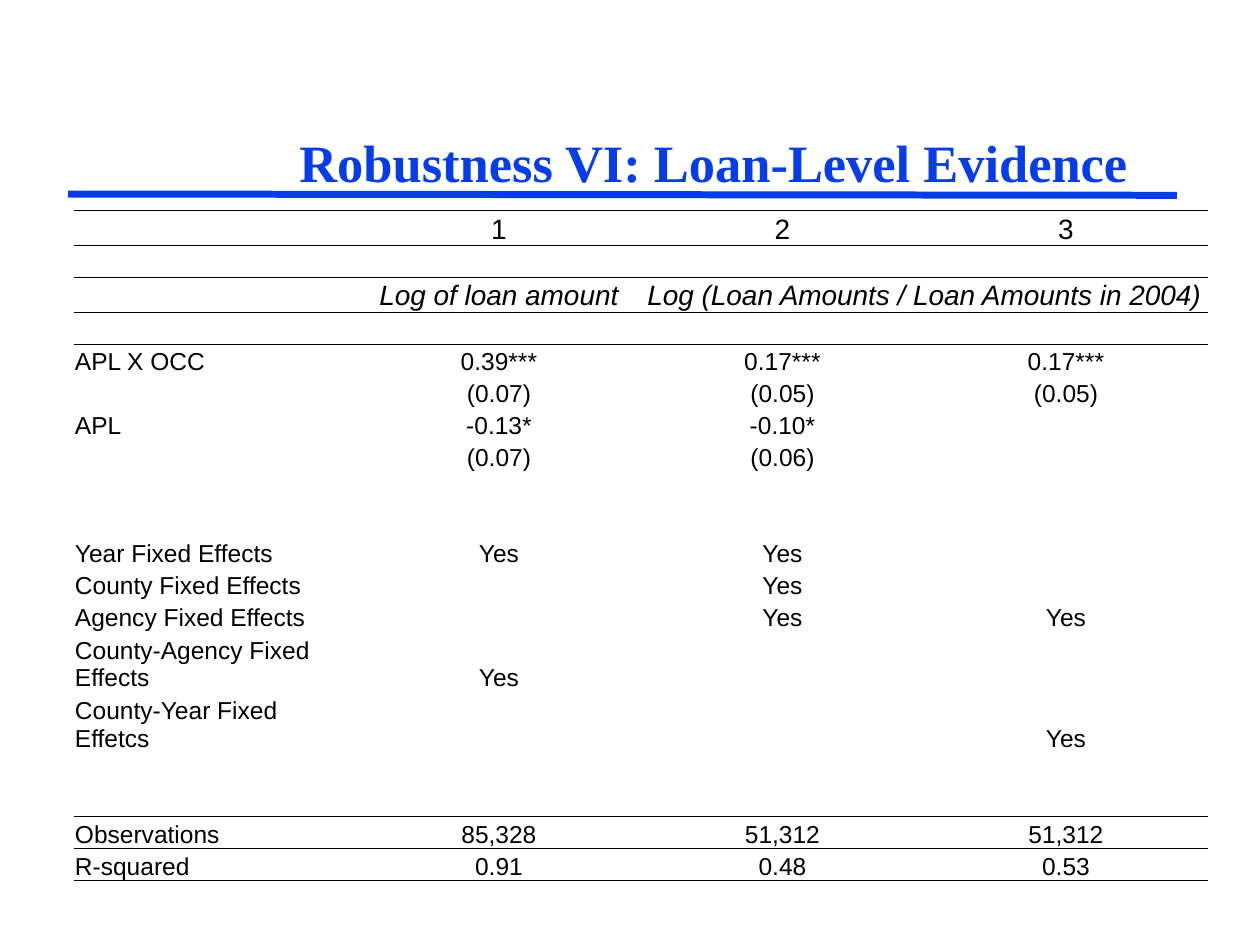
from dataclasses import dataclass

from lxml.etree import SubElement
from pptx import Presentation
from pptx.dml.color import RGBColor
from pptx.enum.shapes import MSO_CONNECTOR
from pptx.enum.text import MSO_ANCHOR, PP_ALIGN
from pptx.oxml import parse_xml
from pptx.oxml.ns import nsdecls, qn
from pptx.util import Inches, Pt


@dataclass(frozen=True)
class Theme:
    """Colours, fonts and type sizes of the deck."""
    accent: str = "063DE8"
    ink: str = "000000"
    title_font: str = "Times New Roman"
    body_font: str = "Arial"
    title_size: int = 30
    head_size: int = 16
    body_size: int = 14
    title_rule: float = 4
    table_rule: float = 0.5
    plain_table: str = "{2D5ABB26-0587-4C30-8999-92F81FD0307C}"


ROWS = [
    ["", "1", "2", "3"],
    [""] * 4,
    ["", "Log of loan amount", "Log (Loan Amounts / Loan Amounts in 2004)", ""],
    [""] * 4,
    ["APL X OCC", "0.39***", "0.17***", "0.17***"],
    ["", "(0.07)", "(0.05)", "(0.05)"],
    ["APL", "-0.13*", "-0.10*", ""],
    ["", "(0.07)", "(0.06)", ""],
    [""] * 4,
    [""] * 4,
    ["Year Fixed Effects", "Yes", "Yes", ""],
    ["County Fixed Effects", "", "Yes", ""],
    ["Agency Fixed Effects", "", "Yes", "Yes"],
    ["County-Agency Fixed Effects", "Yes", "", ""],
    ["County-Year Fixed Effetcs", "", "", "Yes"],
    [""] * 4,
    [""] * 4,
    ["Observations", "85,328", "51,312", "51,312"],
    ["R-squared", "0.91", "0.48", "0.53"],
]
RULED_ABOVE = {0, 1, 3, 17, len(ROWS)}
HEAD_ROWS = {0, 2}
LABEL_ROW = 2


class Page:
    """Draws elements on one slide, placed on a grid of 100 columns by 75 rows."""

    def __init__(self, deck, theme):
        """Add a blank slide to the deck."""
        self.theme = theme
        self.column = deck.slide_width / 100
        self.row = deck.slide_height / 75
        self.shapes = deck.slides.add_slide(deck.slide_layouts[6]).shapes

    def place(self, *lengths):
        """Turn alternating columns and rows into lengths."""
        return [round(n * (self.row if i % 2 else self.column)) for i, n in enumerate(lengths)]

    def add_span(self, para, text, color, align, **style):
        """Put one styled span into a paragraph."""
        para.alignment = align
        span = para.add_run()
        span.text = text
        for name, value in style.items():
            setattr(span.font, name, value)
        span.font.color.rgb = RGBColor.from_string(color)

    def rule(self, *ends):
        """Draw the line under the title."""
        line = self.shapes.add_connector(MSO_CONNECTOR.STRAIGHT, *self.place(*ends))
        line.line.color.rgb = RGBColor.from_string(self.theme.accent)
        line.line.width = Pt(self.theme.title_rule)
        SubElement(line._element.spPr, qn("a:effectLst"))

    def title(self, text, *area):
        """Add the slide title."""
        frame = self.shapes.add_textbox(*self.place(*area)).text_frame
        frame.word_wrap = True
        frame.vertical_anchor = MSO_ANCHOR.BOTTOM
        self.add_span(frame.paragraphs[0], text, self.theme.accent, PP_ALIGN.CENTER,
                      name=self.theme.title_font, size=Pt(self.theme.title_size), bold=True)

    def border(self, cell, sides):
        """Rule the given sides of a cell."""
        for index, side in enumerate(sides):
            cell._tc.get_or_add_tcPr().insert(index, parse_xml(
                f'<a:{side} {nsdecls("a")} w="{Pt(self.theme.table_rule)}"><a:solidFill>'
                f'<a:srgbClr val="{self.theme.ink}"/></a:solidFill></a:{side}>'))

    def fill_cell(self, cell, text, row, column):
        """Style and fill one table cell."""
        layout = {
            "margin_left": Inches(0.01), "margin_right": Inches(0.01),
            "margin_top": Inches(0.01), "margin_bottom": 0,
            "vertical_anchor": MSO_ANCHOR.MIDDLE if row == LABEL_ROW else MSO_ANCHOR.BOTTOM,
        }
        for name, value in layout.items():
            setattr(cell, name, value)
        cell.fill.background()
        para = cell.text_frame.paragraphs[0]
        size = self.theme.head_size if row in HEAD_ROWS else self.theme.body_size
        if text:
            self.add_span(para, text, self.theme.ink,
                          PP_ALIGN.CENTER if column else PP_ALIGN.LEFT,
                          name=self.theme.body_font, size=Pt(size), italic=row == LABEL_ROW)
        else:
            SubElement(para._p, qn("a:endParaRPr"), sz=str(self.theme.body_size * 100))
        edges = {"lnT": row, "lnB": row + 1}
        self.border(cell, [side for side, edge in edges.items() if edge in RULED_ABOVE])

    def table(self, rows, *area):
        """Draw the regression table with equal columns and rows."""
        frame = self.shapes.add_table(len(rows), len(rows[0]), *self.place(*area))
        table = frame.table
        table.first_row = table.horz_banding = False
        table._tbl.tblPr.find(qn("a:tableStyleId")).text = self.theme.plain_table
        for row, texts in enumerate(rows):
            for column, text in enumerate(texts):
                self.fill_cell(table.cell(row, column), text, row, column)
        table.cell(LABEL_ROW, 2).merge(table.cell(LABEL_ROW, 3))


def main():
    """Build the slide and save it."""
    deck = Presentation()
    deck.slide_width, deck.slide_height = Inches(10), Inches(7.5)
    page = Page(deck, Theme())
    page.rule(5.4, 15.4, 93.4, 15.5)
    page.title("Robustness VI: Loan-Level Evidence", 15, 3, 83.3, 12.8)
    page.table(ROWS, 5.85, 16.7, 90, 48.3)
    deck.save("out.pptx")


if __name__ == "__main__":
    main()
